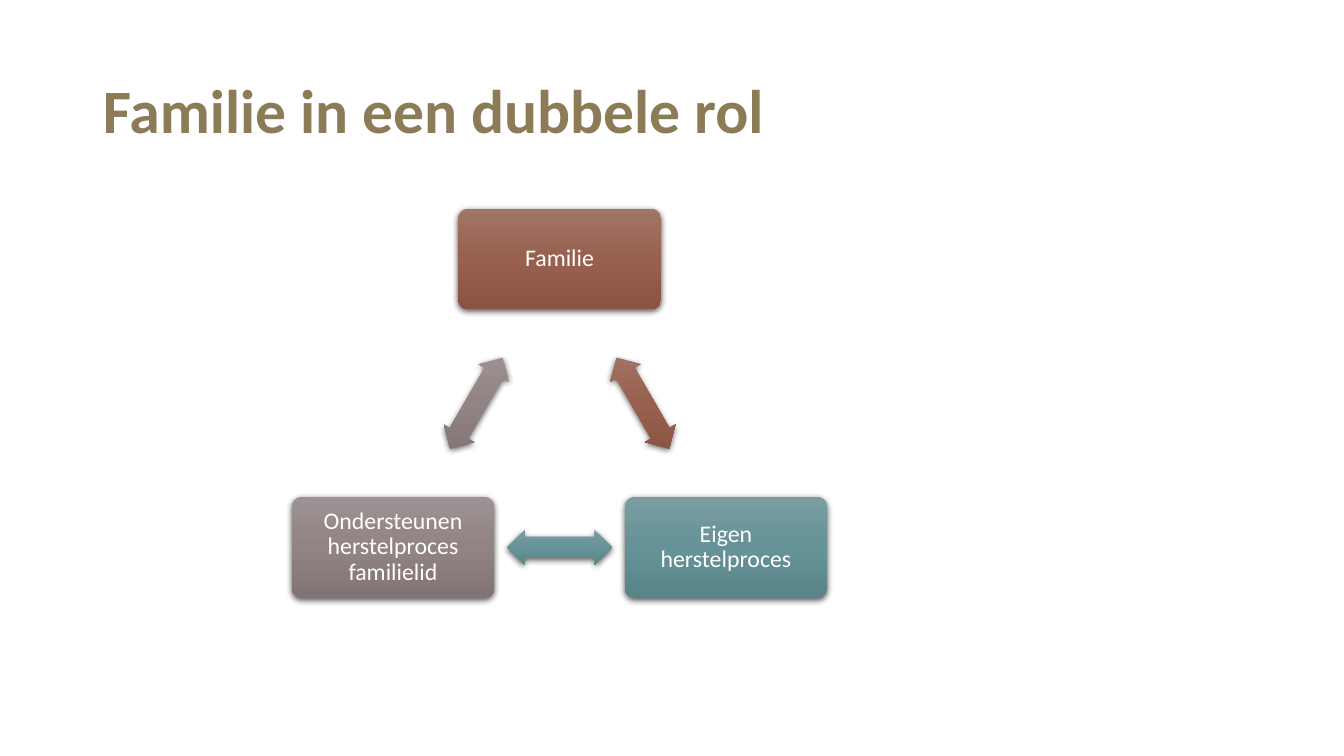
import math

from lxml import etree
from pptx import Presentation, util as u
from pptx.dml.color import RGBColor
from pptx.enum import shapes, text
from pptx.oxml import ns, parse_xml

FONT = "Calibri"
WHITE = "FFFFFF"
ROLES = [
    ("Familie", ("A27568", "98604E", "8A5442")),
    ("Eigen herstelproces", ("7B9DA1", "669397", "598488")),
    ("Ondersteunen herstelproces familielid", ("9D9293", "928384", "827475")),
]


def color(value):
    """Turn a hex string into a colour."""
    return RGBColor.from_string(value)


def write(frame, words, size, ink, bold=False, align=text.PP_ALIGN.LEFT, inset=0.1):
    """Fill a text frame with one formatted paragraph."""
    frame.word_wrap = True
    frame.vertical_anchor = text.MSO_ANCHOR.MIDDLE
    frame.margin_left = frame.margin_right = u.Inches(inset)
    frame.margin_top = frame.margin_bottom = u.Inches(inset)
    para = frame.paragraphs[0]
    para.alignment, para.line_spacing = align, 0.9
    span = para.add_run()
    span.text = words
    span.font.name, span.font.size, span.font.bold = FONT, u.Pt(size), bold
    span.font.color.rgb = color(ink)


def paint(shape, shades):
    """Give a shape a page-vertical gradient and a soft shadow."""
    shape.line.fill.background()
    shape.shadow.inherit = False
    stops = "".join(
        f'<a:gs pos="{place * 50000}"><a:srgbClr val="{shade}"/></a:gs>'
        for place, shade in enumerate(shades))
    gradient = parse_xml(
        f'<a:gradFill {ns.nsdecls("a")} rotWithShape="0"><a:gsLst>{stops}</a:gsLst>'
        '<a:lin ang="5400000" scaled="0"/></a:gradFill>')
    properties = shape._element.spPr
    properties.find(ns.qn("a:prstGeom")).addnext(gradient)
    shadow = etree.SubElement(
        properties.find(ns.qn("a:effectLst")), ns.qn("a:outerShdw"),
        blurRad=str(u.Pt(4.5)), dist=str(u.Pt(1.5)), dir="5400000", rotWithShape="0")
    shade = etree.SubElement(shadow, ns.qn("a:srgbClr"), val="000000")
    etree.SubElement(shade, ns.qn("a:alpha"), val="63000")


def add_centered(page, kind, center, size, shades, adjustments):
    """Add a painted shape around a centre point."""
    corner = [middle - length / 2 for middle, length in zip(center, size)]
    shape = page.shapes.add_shape(kind, *map(u.Inches, (*corner, *size)))
    for index, value in enumerate(adjustments):
        shape.adjustments[index] = value
    paint(shape, shades)
    return shape


def add_title(page, box):
    """Place the slide title in its box."""
    title = page.shapes.title
    title.left, title.top, title.width, title.height = map(u.Inches, box)
    write(title.text_frame, "Familie in een dubbele rol", 44, "8B7B57", bold=True)


def add_cycle(page, box):
    """Spread the roles over a circle in the box, with arrows between them."""
    left, top, width, height = box
    node = (2.01, 1)
    step = 2 * math.pi / len(ROLES)
    radius = (height - node[1]) / (1 - math.cos(step))
    hub = (left + width / 2, top + node[1] / 2 + radius)

    def point(turn, reach):
        return hub[0] + reach * math.sin(turn), hub[1] - reach * math.cos(turn)

    for index, (label, shades) in enumerate(ROLES):
        turn = index * step
        role = add_centered(page, shapes.MSO_SHAPE.ROUNDED_RECTANGLE,
                            point(turn, radius), node, shades, [0.1])
        write(role.text_frame, label, 17, WHITE,
              align=text.PP_ALIGN.CENTER, inset=0.07)
        halfway = turn + step / 2
        arrow = add_centered(page, shapes.MSO_SHAPE.LEFT_RIGHT_ARROW,
                             point(halfway, radius * math.cos(step / 2)),
                             (1.04, 0.35), shades, [0.6, 0.5])
        arrow.rotation = math.degrees(halfway)


def main():
    """Build and save the slide."""
    deck = Presentation()
    deck.slide_width, deck.slide_height = u.Inches(13.33), u.Inches(7.5)
    page = deck.slides.add_slide(deck.slide_layouts[5])
    add_title(page, (0.92, 0.4, 11.5, 1.45))
    add_cycle(page, (2.89, 2.07, 5.32, 3.86))
    deck.save("out.pptx")


if __name__ == "__main__":
    main()
